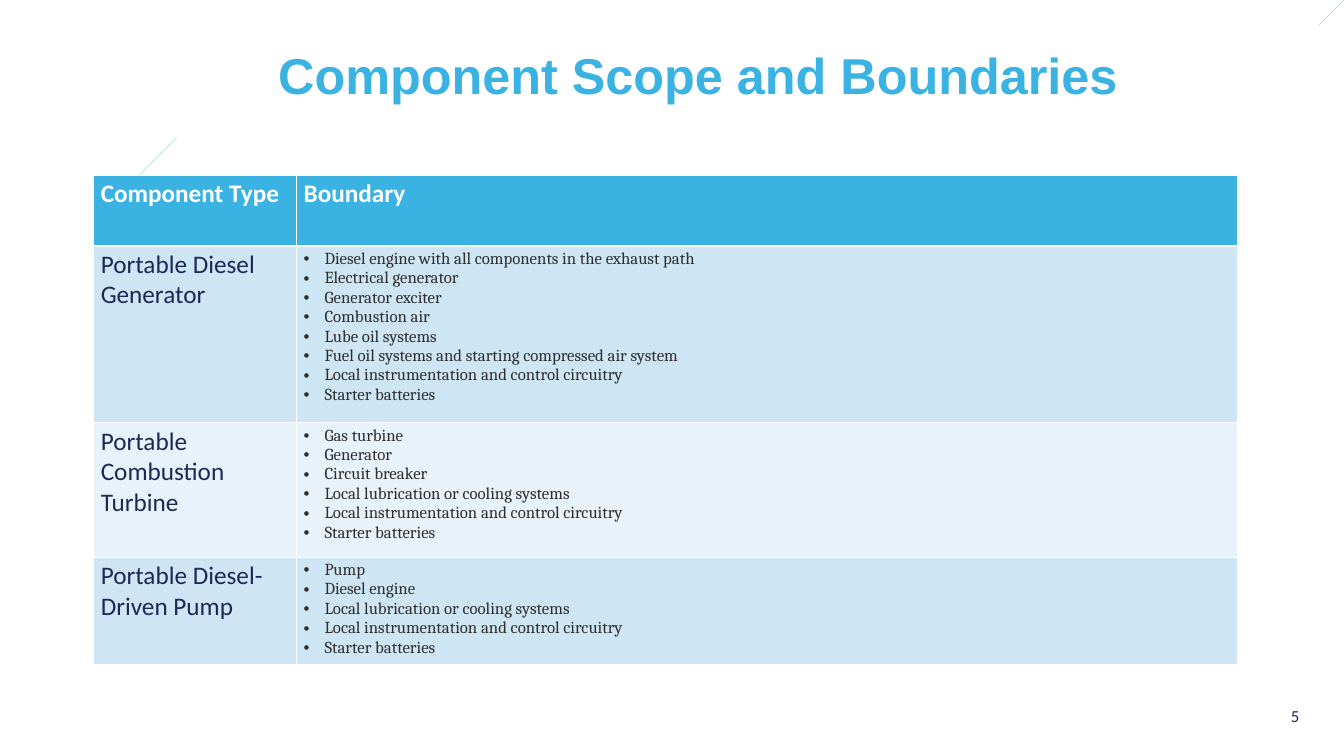
from dataclasses import dataclass

from lxml.etree import SubElement
from pptx import Presentation
from pptx.dml.color import RGBColor as Color
from pptx.enum.shapes import MSO_CONNECTOR as Connector
from pptx.enum.text import MSO_ANCHOR as Anchor
from pptx.enum.text import MSO_AUTO_SIZE as AutoSize
from pptx.enum.text import PP_ALIGN as Align
from pptx.oxml.ns import qn
from pptx.util import Inches, Pt

TITLE = "Component Scope and Boundaries"
PAGE_NUMBER = "5"
HEADERS = ("Component Type", "Boundary")
SHARED_PARTS = ["Local instrumentation and control circuitry", "Starter batteries"]
COOLING = "Local lubrication or cooling systems"
COMPONENTS = [
    ("Portable Diesel Generator", [
        "Diesel engine with all components in the exhaust path",
        "Electrical generator",
        "Generator exciter",
        "Combustion air",
        "Lube oil systems",
        "Fuel oil systems and starting compressed air system",
        *SHARED_PARTS,
    ]),
    ("Portable Combustion Turbine", [
        "Gas turbine", "Generator", "Circuit breaker", COOLING, *SHARED_PARTS,
    ]),
    ("Portable Diesel-Driven Pump", [
        "Pump", "Diesel engine", COOLING, *SHARED_PARTS,
    ]),
]

COLUMN_WIDTHS = (3.02, 14.01)
ROW_HEIGHTS = (1.05, 2.63, 2, 1.21)
ACCENT_LINES = [(19.62, 0.38, 20, 0), (1.72, 2.96, 2.63, 2.05)]


@dataclass(frozen=True)
class Theme:
    accent: str = "3AB3E2"
    navy: str = "1D2855"
    body: str = "2E2E2E"
    white: str = "FFFFFF"
    bands: tuple = ("CEE5F4", "E8F2FA")
    title_font: str = "Arial"
    label_font: str = "Calibri"
    list_font: str = "Cambria"
    title_size: int = 54
    label_size: int = 27
    small_size: int = 18


THEME = Theme()


def style(para, name, size, color, bold=False):
    for span in para.runs:
        span.font.name = name
        span.font.size = Pt(size)
        span.font.bold = bold
        span.font.color.rgb = Color.from_string(color)


def add_accent_line(page, ends):
    line = page.shapes.add_connector(Connector.STRAIGHT, *map(Inches, ends))
    line.line.width = Pt(0.5)
    line.line.color.rgb = Color.from_string(THEME.accent)
    tint = line.line.fill._xPr.find(".//" + qn("a:srgbClr"))
    SubElement(tint, qn("a:alpha"), val="50000")
    SubElement(line._element.spPr, qn("a:effectLst"))


def add_title(page):
    title = page.shapes.title
    title.left, title.top, title.width, title.height = map(
        Inches, (3.12, 0.41, 14.54, 1.38))
    frame = title.text_frame
    frame.text = TITLE
    frame.word_wrap = True
    frame.auto_size = AutoSize.NONE
    frame.vertical_anchor = Anchor.MIDDLE
    para = frame.paragraphs[0]
    para.alignment = Align.CENTER
    style(para, THEME.title_font, THEME.title_size, THEME.accent, True)


def add_page_number(page):
    box = page.shapes.add_textbox(*map(Inches, (19.11, 10.45, 0.5, 0.4)))
    frame = box.text_frame
    frame.text = PAGE_NUMBER
    frame.word_wrap = False
    style(frame.paragraphs[0], THEME.label_font, THEME.small_size, THEME.navy)


def format_cell(cell, fill, bottom=1, top=1):
    """Set margins, white borders (widths in points) and fill."""
    cell.margin_left = cell.margin_right = Inches(0.11)
    cell.margin_top = cell.margin_bottom = Inches(0.05)
    properties = cell._tc.get_or_add_tcPr()
    for side, width in (("L", 1), ("R", 1), ("T", top), ("B", bottom)):
        border = SubElement(properties, qn(f"a:ln{side}"), w=str(Pt(width)))
        solid = SubElement(border, qn("a:solidFill"))
        SubElement(solid, qn("a:srgbClr"), val=THEME.white)
    cell.fill.solid()
    cell.fill.fore_color.rgb = Color.from_string(fill)


def fill_label(cell, text, color, bold=False):
    cell.text_frame.text = text
    style(cell.text_frame.paragraphs[0], THEME.label_font, THEME.label_size,
          color, bold)


def fill_bullets(cell, items):
    frame = cell.text_frame
    frame.text = "\n".join(items)
    for para in frame.paragraphs:
        properties = para._p.get_or_add_pPr()
        properties.set("marL", str(Inches(0.31)))
        properties.set("indent", str(-Inches(0.31)))
        SubElement(properties, qn("a:buFont"), typeface="Arial")
        SubElement(properties, qn("a:buChar"), char="•")
        style(para, THEME.list_font, THEME.small_size, THEME.body)


def add_component_table(page):
    table = page.shapes.add_table(
        len(ROW_HEIGHTS), len(COLUMN_WIDTHS), Inches(1.39), Inches(2.61),
        Inches(sum(COLUMN_WIDTHS)), Inches(sum(ROW_HEIGHTS))).table
    for column, width in zip(table.columns, COLUMN_WIDTHS):
        column.width = Inches(width)
    for row, height in zip(table.rows, ROW_HEIGHTS):
        row.height = Inches(height)

    for column, header in enumerate(HEADERS):
        cell = table.cell(0, column)
        format_cell(cell, THEME.accent, bottom=3)
        fill_label(cell, header, THEME.white, True)

    for row, (component, parts) in enumerate(COMPONENTS, start=1):
        label, boundary = table.cell(row, 0), table.cell(row, 1)
        for cell in (label, boundary):
            format_cell(cell, THEME.bands[(row - 1) % 2], top=3 if row == 1 else 1)
        fill_label(label, component, THEME.navy)
        fill_bullets(boundary, parts)


def main():
    deck = Presentation()
    deck.slide_width, deck.slide_height = Inches(20), Inches(11.25)
    page = deck.slides.add_slide(deck.slide_layouts.get_by_name("Title Only"))
    page.background.fill.solid()
    page.background.fill.fore_color.rgb = Color.from_string(THEME.white)
    for ends in ACCENT_LINES:
        add_accent_line(page, ends)
    add_page_number(page)
    add_title(page)
    add_component_table(page)
    deck.save("out.pptx")


if __name__ == "__main__":
    main()
